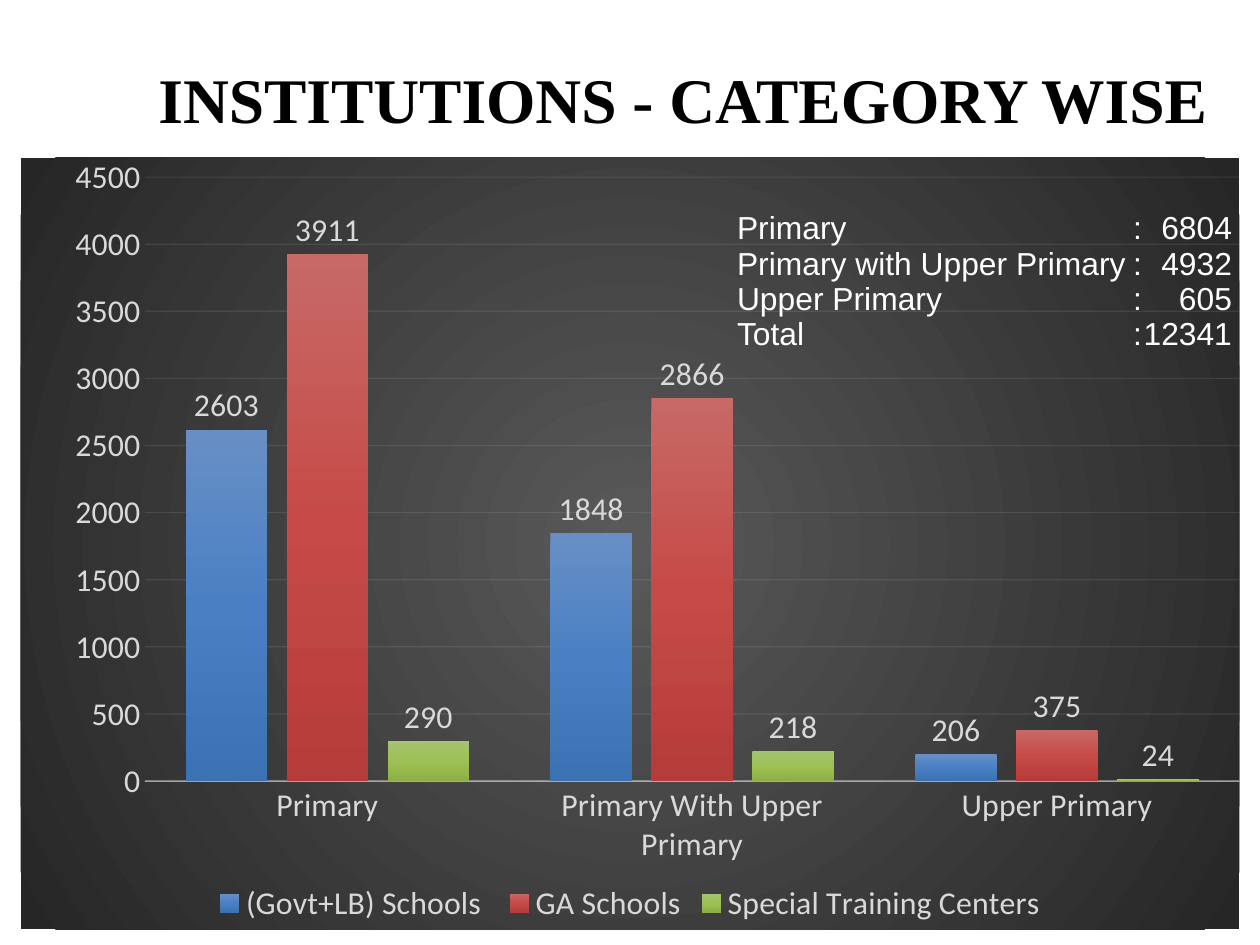
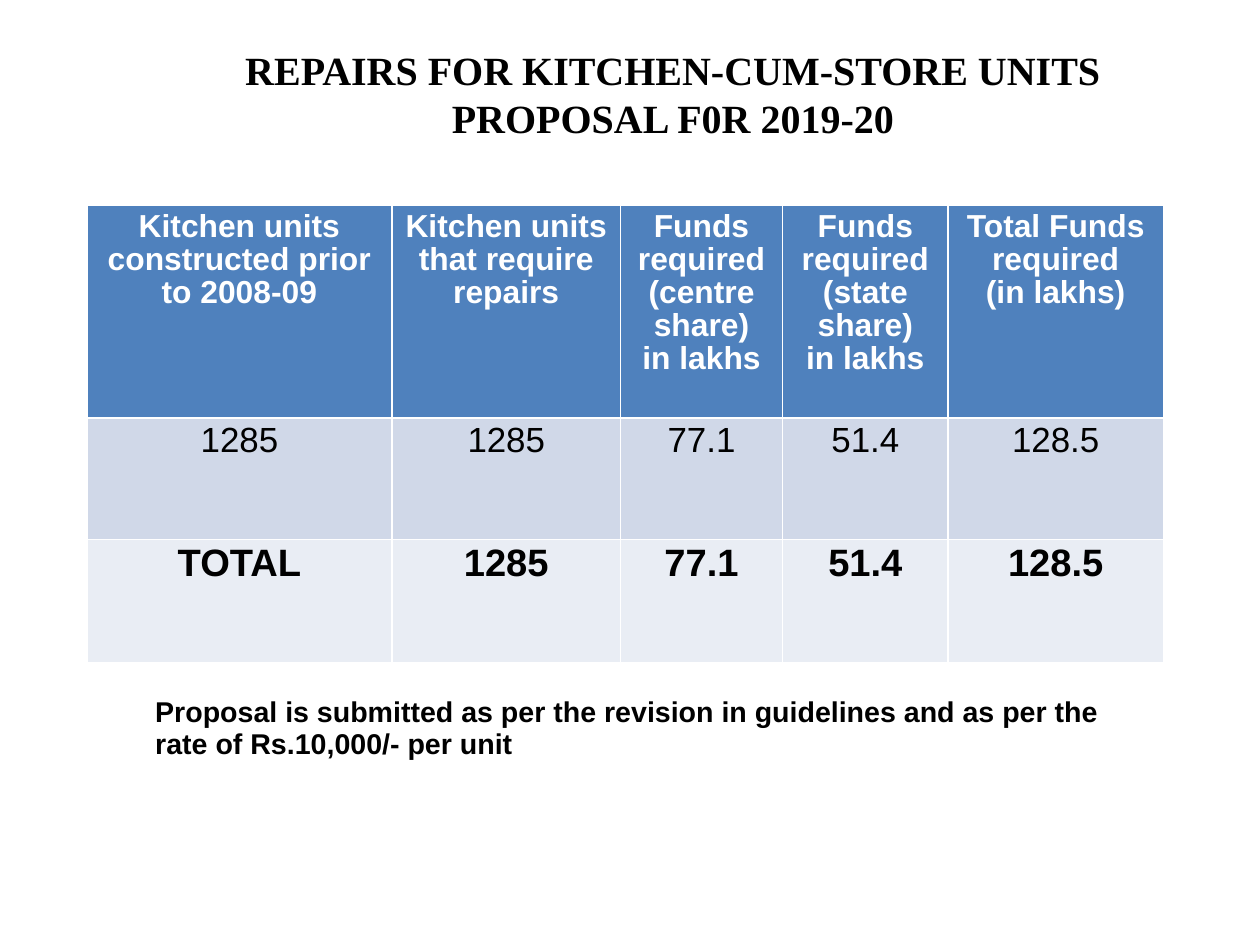
"""Build two slides: institutions by category, and kitchen repair funds."""
from lxml import etree
from pptx import Presentation
from pptx.chart.data import CategoryChartData
from pptx.dml.color import RGBColor
from pptx.enum import chart as ch, text as tx
from pptx.oxml import parse_xml
from pptx.oxml.ns import nsdecls, qn
from pptx.util import Cm, Pt

BLACK = RGBColor(0x00, 0x00, 0x00)
WHITE = RGBColor(0xFF, 0xFF, 0xFF)
PALE = RGBColor(0xD9, 0xD9, 0xD9)
RULE = RGBColor(0xF2, 0xF2, 0xF2)
HEAD = RGBColor(0x4F, 0x81, 0xBD)
BAND = RGBColor(0xD0, 0xD8, 0xE8)
LIGHT = RGBColor(0xE9, 0xED, 0xF4)
SERIF, SANS, CHART = "Times New Roman", "Arial", "Calibri"


def write(para, words, size, color, bold=False, face=SANS):
    for i, line in enumerate(words.split("\n")):
        if i:
            para.add_line_break()
        run = para.add_run()
        run.text = line
        run.font.size, run.font.bold, run.font.name = Pt(size), bold, face
        run.font.color.rgb = color


def blend(stops, shade):
    marks = "".join(
        f'<a:gs pos="{pos * 1000}"><a:srgbClr val="{rgb}"/></a:gs>' for pos, rgb in stops)
    return (f'<a:gradFill {nsdecls("a")} rotWithShape="1">'
            f'<a:gsLst>{marks}</a:gsLst>{shade}</a:gradFill>')


deck = Presentation()
deck.slide_width, deck.slide_height = Cm(28), Cm(21)

pages = []
for words, left, top, high, size, anchor in (
        ("INSTITUTIONS - CATEGORY WISE", 2.79, 0.84, 2.67, 40, tx.MSO_ANCHOR.MIDDLE),
        ("REPAIRS FOR KITCHEN-CUM-STORE UNITS\nPROPOSAL F0R 2019-20",
         2.57, 0, 3.3, 25.2, tx.MSO_ANCHOR.BOTTOM)):
    page = deck.slides.add_slide(deck.slide_layouts[5])
    title = page.shapes.title
    title.left, title.top, title.width, title.height = Cm(left), Cm(top), Cm(24.77), Cm(high)
    frame = title.text_frame
    frame.auto_size = tx.MSO_AUTO_SIZE.NONE
    frame.vertical_anchor = anchor
    frame.margin_left = frame.margin_right = Cm(0.28)
    frame.margin_top = frame.margin_bottom = Cm(0.15)
    para = frame.paragraphs[0]
    para.alignment = tx.PP_ALIGN.CENTER
    write(para, words, size, BLACK, True, SERIF)
    pages.append(page)
schools, repairs = pages

groups = (
    ("(Govt+LB) Schools ", (2618, 1847, 201), (2603, 1848, 206), ("688FC5", "4A80C3", "3B72B3")),
    ("GA Schools", (3928, 2854, 378), (3911, 2866, 375), ("C76967", "C64B47", "B63C39")),
    ("Special Training Centers", (297, 222, 13), (290, 218, 24), ("A6C36F", "9DC054", "8DB045")),
)
data = CategoryChartData()
data.categories = ["Primary", "Primary With Upper Primary", "Upper Primary"]
for name, counts, marks, tints in groups:
    data.add_series(name, counts)
chart = schools.shapes.add_chart(
    ch.XL_CHART_TYPE.COLUMN_CLUSTERED, Cm(0.46), Cm(3.5), Cm(27.1), Cm(17.15), data).chart
chart.has_title = False
chart.font.size, chart.font.name, chart.font.color.rgb = Pt(20), CHART, PALE
chart.has_legend = True
chart.legend.position = ch.XL_LEGEND_POSITION.BOTTOM
chart.legend.include_in_layout = False

plot = chart.plots[0]
plot.gap_width, plot.overlap, plot.vary_by_categories = 100, -24, False
for series, (name, counts, marks, tints) in zip(plot.series, groups):
    fill = blend(zip((0, 50, 100), tints), '<a:lin ang="5400000" scaled="0"/>')
    series._element.get_or_add_spPr().append(parse_xml(fill))
    series.invert_if_negative = False
    labels = series.data_labels
    labels.show_value = True
    labels.position = ch.XL_LABEL_POSITION.OUTSIDE_END
    for i, mark in enumerate(marks):
        label = series.points[i].data_label
        write(label.text_frame.paragraphs[0], str(mark), 20, PALE, face=CHART)
        label.position = ch.XL_LABEL_POSITION.OUTSIDE_END

cats, vals = chart.category_axis, chart.value_axis
cats.major_tick_mark = vals.major_tick_mark = ch.XL_TICK_MARK.NONE
vals.minimum_scale, vals.maximum_scale, vals.major_unit = 0, 4500, 500
vals.format.line.fill.background()
for line, width, alpha in ((cats.format.line, 1, 54),
                           (vals.major_gridlines.format.line, 0.75, 10)):
    line.width = Pt(width)
    line.color.rgb = RULE
    color = line._get_or_add_ln().find(".//" + qn("a:srgbClr"))
    etree.SubElement(color, qn("a:alpha"), val=str(alpha * 1000))

body = chart.element.find(qn("c:chart"))
glow = blend(((0, "595959"), (100, "262626")),
             '<a:path path="circle"><a:fillToRect l="50000" t="50000" r="50000" b="50000"/></a:path>')
body.addnext(parse_xml(
    f'<c:spPr {nsdecls("c", "a")}>{glow}<a:ln><a:noFill/></a:ln></c:spPr>'))
area = body.find(qn("c:plotArea"))
for old in area.findall(qn("c:layout")):
    area.remove(old)
sizes = "".join(f'<c:{key} val="{val}"/>' for key, val in (
    ("layoutTarget", "inner"), ("xMode", "edge"), ("yMode", "edge"),
    ("x", 0.102), ("y", 0.025), ("w", 0.898), ("h", 0.783)))
area.insert(0, parse_xml(
    f'<c:layout {nsdecls("c")}><c:manualLayout>{sizes}</c:manualLayout></c:layout>'))

totals = (("Primary", "6804"), ("Primary with Upper Primary", "4932"),
          ("Upper Primary", "605"), ("Total", "12341"))
frame = schools.shapes.add_textbox(Cm(16.13), Cm(4.57), Cm(11.87), Cm(3.43)).text_frame
frame.word_wrap = True
frame.auto_size = tx.MSO_AUTO_SIZE.SHAPE_TO_FIT_TEXT
for i, (name, count) in enumerate(totals):
    para = frame.add_paragraph() if i else frame.paragraphs[0]
    para.line_spacing = 0.93
    tabs = etree.SubElement(para._p.get_or_add_pPr(), qn("a:tabLst"))
    for stop, side in ((8.8, "l"), (11, "r")):
        etree.SubElement(tabs, qn("a:tab"), pos=str(Cm(stop)), algn=side)
    write(para, f"{name}\t:\t{count}", 20, WHITE)

rows = (
    (4.72, HEAD, 20, WHITE, True, (
        "Kitchen units constructed prior to 2008-09", "Kitchen units that require repairs",
        "Funds required (centre share)\nin lakhs", "Funds required (state share)\nin lakhs",
        "Total Funds required\n(in lakhs)")),
    (2.7, BAND, 22, BLACK, False, ("1285", "1285", "77.1", "51.4", "128.5")),
    (2.74, LIGHT, 24, BLACK, True, ("TOTAL", "1285", "77.1", "51.4", "128.5")),
)
widths = (6.78, 5.08, 3.6, 3.68, 4.78)
table = repairs.shapes.add_table(
    len(rows), len(widths), Cm(1.93), Cm(4.57), Cm(sum(widths)), Cm(10.16)).table
for col, width in zip(table.columns, widths):
    col.width = Cm(width)
for row, (high, fill, size, color, bold, cells) in zip(table.rows, rows):
    row.height = Cm(high)
    for cell, words in zip(row.cells, cells):
        cell.fill.solid()
        cell.fill.fore_color.rgb = fill
        para = cell.text_frame.paragraphs[0]
        para.alignment, para.line_spacing = tx.PP_ALIGN.CENTER, 0.93
        write(para, words, size, color, bold)

frame = repairs.shapes.add_textbox(Cm(3.2), Cm(15.37), Cm(22.02), Cm(1.68)).text_frame
frame.word_wrap = True
frame.auto_size = tx.MSO_AUTO_SIZE.SHAPE_TO_FIT_TEXT
para = frame.paragraphs[0]
para.line_spacing = 0.93
write(para, "Proposal is submitted as per the revision in guidelines and as per the "
            "rate of Rs.10,000/- per unit", 18, BLACK, True)

deck.save("out.pptx")
